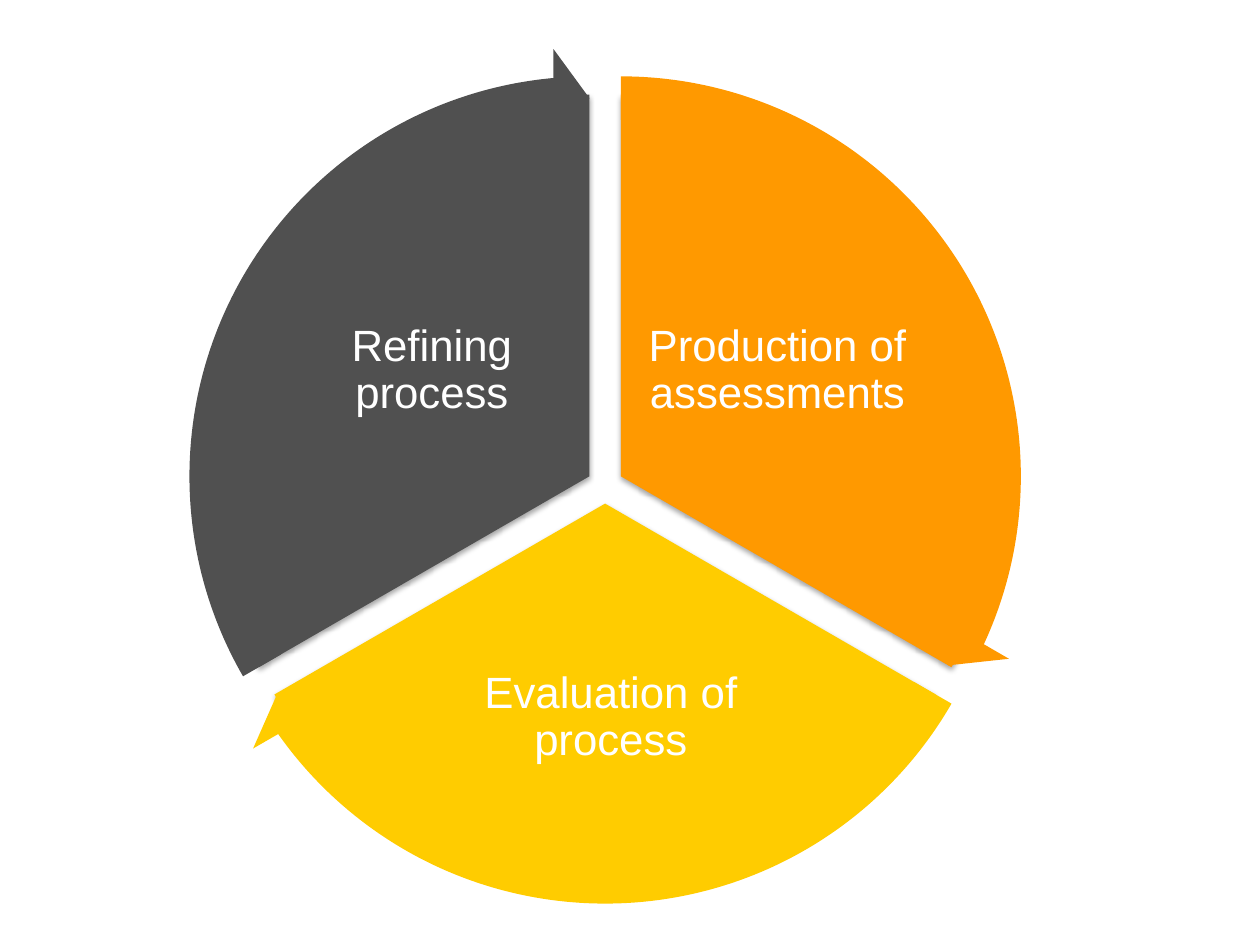
import math

import lxml.etree
import pptx
import pptx.dml.color
import pptx.enum.shapes
import pptx.enum.text
import pptx.oxml.ns
import pptx.util

Pt = pptx.util.Pt
MSO_SHAPE = pptx.enum.shapes.MSO_SHAPE

COLORS = {
    "orange": "FF9900",
    "yellow": "FFCC00",
    "gray": "505050",
    "white": "FFFFFF",
    "shadow": "000000",
}
CENTER_X, CENTER_Y = 345.8, 277.4
GAP = 10.4  # distance of each sector from the common centre
PIE_SIZE, ARROW_SIZE = 436.3, 490.3

# text, colour, direction from the centre in degrees, text box,
# pie angles, arrow angles (in units of 5/3 degree)
SECTORS = [
    ("Production of assessments", "orange", -30, (366.5, 147, 155.5, 129.5),
     (162, 18), (14.72, 161.99)),
    ("Evaluation of process", "yellow", 90, (232, 353, 234, 114.5),
     (18, 90), (86.72, 18)),
    ("Refining process", "gray", 210, (169, 147, 155.5, 129.5),
     (90, 162), (158.73, 90)),
]


def rgb(name):
    return pptx.dml.color.RGBColor.from_string(COLORS[name])


def write_text(tf, text, size=25, font="Arial", color="white", line_spacing=0.9):
    p = tf.paragraphs[0]
    p.alignment = pptx.enum.text.PP_ALIGN.CENTER
    p.line_spacing = line_spacing
    r = p.add_run()
    r.text = text
    r.font.size = Pt(size)
    r.font.name = font
    r.font.color.rgb = rgb(color)


def add_shadow(sp):
    """Put a soft shadow just below the shape."""
    sp.shadow.inherit = False
    effects = sp._element.spPr.find(pptx.oxml.ns.qn("a:effectLst"))
    shadow = lxml.etree.SubElement(
        effects, pptx.oxml.ns.qn("a:outerShdw"), blurRad=str(Pt(3.1)),
        dist=str(Pt(1.8)), dir="5400000", rotWithShape="0")
    color = lxml.etree.SubElement(
        shadow, pptx.oxml.ns.qn("a:srgbClr"), val=COLORS["shadow"])
    lxml.etree.SubElement(color, pptx.oxml.ns.qn("a:alpha"), val="35000")


class CycleSlide:
    def __init__(self, slide, inset=2.2):
        self.s = slide
        self.inset = inset

    def round_shape(self, kind, direction, size, color, adjustments):
        """Add a shape centred a gap away from the middle of the cycle."""
        angle = math.radians(direction)
        left = CENTER_X + GAP * math.cos(angle) - size / 2
        top = CENTER_Y + GAP * math.sin(angle) - size / 2
        sp = self.s.shapes.add_shape(kind, Pt(left), Pt(top), Pt(size), Pt(size))
        for i, value in enumerate(adjustments):
            sp.adjustments[i] = value
        sp.fill.solid()
        sp.fill.fore_color.rgb = rgb(color)
        sp.line.fill.background()
        sp.shadow.inherit = False
        return sp

    def pie(self, direction, color, angles):
        add_shadow(self.round_shape(MSO_SHAPE.PIE, direction, PIE_SIZE, color, angles))

    def arrow(self, direction, color, angles):
        self.round_shape(MSO_SHAPE.CIRCULAR_ARROW, direction, ARROW_SIZE, color,
                         (0.05085, 3.275, *angles, 0.0593))

    def label(self, text, box):
        tf = self.s.shapes.add_textbox(*map(Pt, box)).text_frame
        tf.word_wrap = True
        tf.vertical_anchor = pptx.enum.text.MSO_ANCHOR.MIDDLE
        tf.margin_left = tf.margin_right = Pt(self.inset)
        tf.margin_top = tf.margin_bottom = Pt(self.inset)
        write_text(tf, text)


def main():
    prs = pptx.Presentation()
    prs.slide_width, prs.slide_height = Pt(720), Pt(540)
    cycle = CycleSlide(prs.slides.add_slide(prs.slide_layouts[6]))
    for text, color, direction, box, pie_angles, _ in SECTORS:
        cycle.pie(direction, color, pie_angles)
        cycle.label(text, box)
    for _, color, direction, _, _, arrow_angles in SECTORS:
        cycle.arrow(direction, color, arrow_angles)
    prs.save("out.pptx")


if __name__ == "__main__":
    main()
